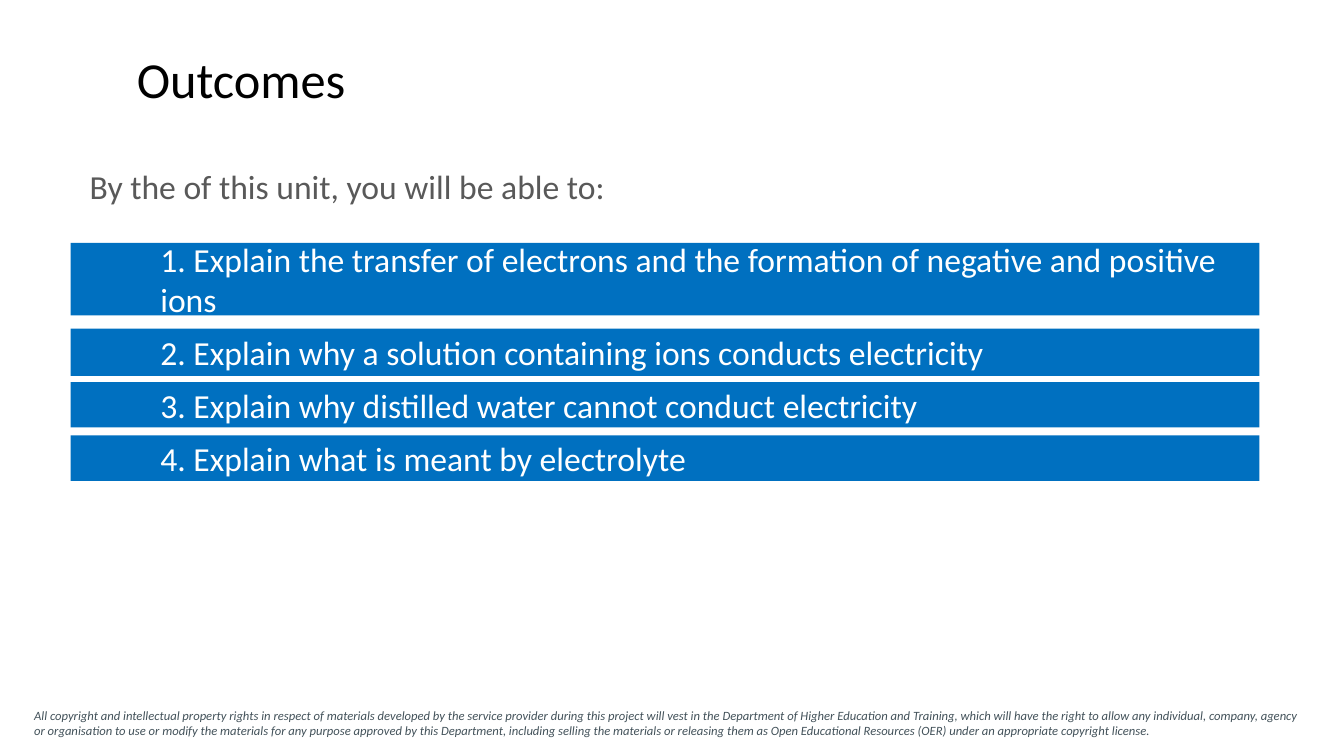
from pptx import Presentation
from pptx.dml.color import RGBColor
from pptx.enum.shapes import MSO_SHAPE
from pptx.enum.text import MSO_ANCHOR, PP_ALIGN
from pptx.util import Pt

EMU_PER_PX = 9144
RECTANGLE = MSO_SHAPE.RECTANGLE
TOP, MIDDLE = MSO_ANCHOR.TOP, MSO_ANCHOR.MIDDLE
LEFT = PP_ALIGN.LEFT
FONT = "Calibri"
COLORS = {
    "title": "000000",
    "intro": "595959",
    "bar": "0070C0",
    "bar_text": "FFFFFF",
    "notice": "43525A",
}
OUTCOMES = [
    ("Explain the transfer of electrons and the formation of negative and positive ions", 241, 72),
    ("Explain why a solution containing ions conducts electricity", 326, 47),
    ("Explain why distilled water cannot conduct electricity", 379, 45),
    ("Explain what is meant by electrolyte", 432, 45),
]
NOTICE = (
    "All copyright and intellectual property rights in respect of materials developed "
    "by the service provider during this project will vest in the Department of Higher "
    "Education and Training, which will have the right to allow any individual, company, "
    "agency or organisation to use or modify the materials for any purpose approved by "
    "this Department, including selling the materials or releasing them as Open "
    "Educational Resources (OER) under an appropriate copyright license."
)


def px(length):
    return length * EMU_PER_PX


def rgb(name):
    return RGBColor.from_string(COLORS[name])


def write(shape, text, size, color, anchor=TOP, italic=False):
    frame = shape.text_frame
    frame.word_wrap = True
    frame.vertical_anchor = anchor
    paragraph = frame.paragraphs[0]
    paragraph.alignment = LEFT
    run = paragraph.add_run()
    run.text = text
    run.font.name = FONT
    run.font.size = Pt(size)
    run.font.italic = italic
    run.font.color.rgb = rgb(color)
    return paragraph


def add_text(slide, box, text, size, color, anchor=TOP, italic=False):
    shape = slide.shapes.add_textbox(*map(px, box))
    return write(shape, text, size, color, anchor, italic)


def add_outcome_bar(slide, text, top, height):
    shape = slide.shapes.add_shape(RECTANGLE, px(70), px(top), px(1179), px(height))
    shape.shadow.inherit = False
    shape.fill.solid()
    shape.fill.fore_color.rgb = rgb("bar")
    shape.line.fill.background()
    frame = shape.text_frame
    frame.margin_left, frame.margin_right = px(89), px(13)
    frame.margin_top = frame.margin_bottom = px(6)
    write(shape, text, 24, "bar_text", MIDDLE)


def main():
    presentation = Presentation()
    presentation.slide_width = px(1333)
    presentation.slide_height = px(750)
    slide = presentation.slides.add_slide(presentation.slide_layouts[6])

    add_text(slide, (24, 697, 1285, 40), NOTICE, 9, "notice", italic=True)
    intro = add_text(slide, (79, 164, 1042, 53), "By the of this unit, you will be able to:", 24, "intro")
    intro.line_spacing = 0.9
    intro.space_before = Pt(10)
    for number, (outcome, top, height) in enumerate(OUTCOMES, start=1):
        add_outcome_bar(slide, f"{number}. {outcome}", top, height)
    title = add_text(slide, (126, 29, 833, 105), "Outcomes", 36, "title", MIDDLE)
    title.line_spacing = 0.9

    presentation.save("out.pptx")


if __name__ == "__main__":
    main()
